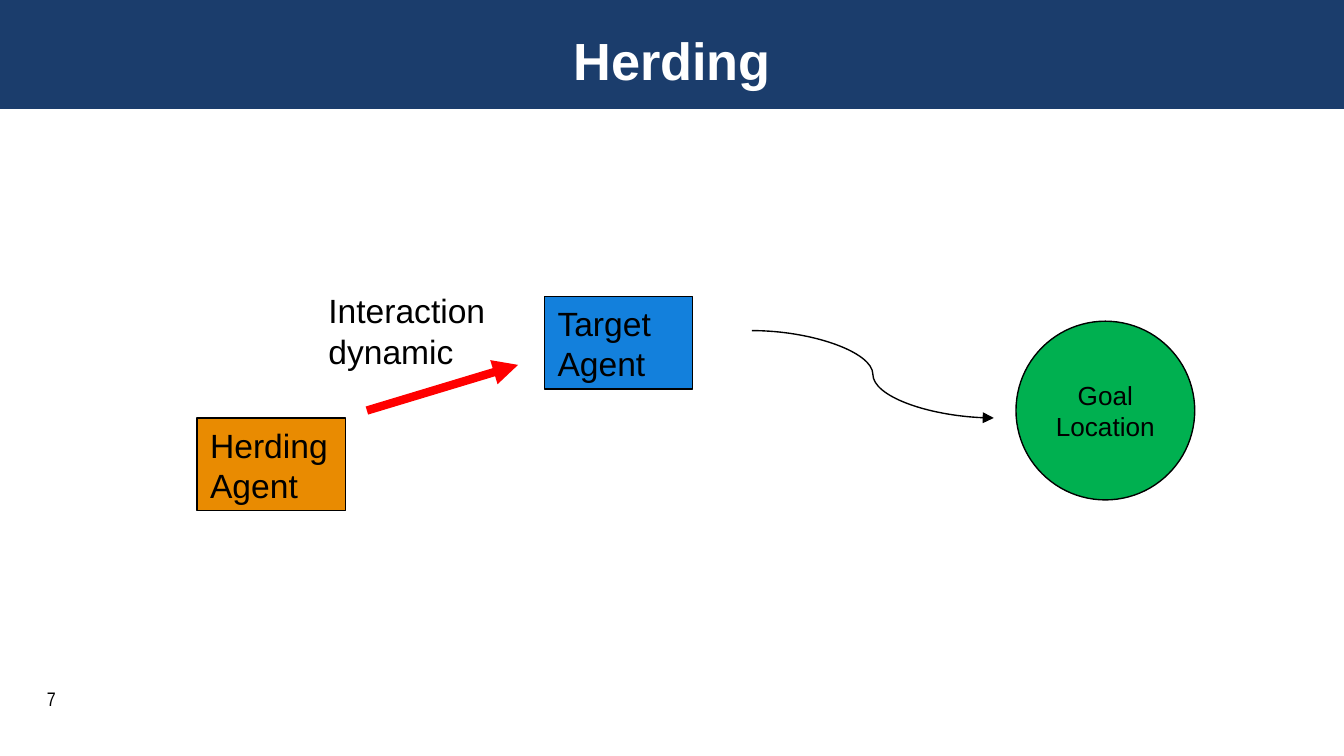
import pptx
import pptx.dml.color
import pptx.enum.shapes
import pptx.enum.text
import pptx.oxml
import pptx.oxml.ns
import pptx.util

PX = 4572  # EMU per px, 200 px to the inch
SLIDE_W, SLIDE_H = 2000, 1125
BLACK = "000000"
SHAPE = pptx.enum.shapes.MSO_SHAPE
CONNECTOR = pptx.enum.shapes.MSO_CONNECTOR
ALIGN = pptx.enum.text.PP_ALIGN
ANCHOR = pptx.enum.text.MSO_ANCHOR


def px(*lengths):
    return [pptx.util.Emu(length * PX) for length in lengths]


def rgb(color):
    return pptx.dml.color.RGBColor.from_string(color)


def write(shape, text, size, color=BLACK, font="Arial", bold=False,
          align=ALIGN.LEFT, anchor=ANCHOR.TOP):
    frame = shape.text_frame
    frame.text = text
    frame.word_wrap = True
    frame.vertical_anchor = anchor
    paragraph = frame.paragraphs[0]
    paragraph.alignment = align
    paragraph.font.size = pptx.util.Pt(size)
    paragraph.font.name = font
    paragraph.font.bold = bold
    paragraph.font.color.rgb = rgb(color)


def add_filled(slide, preset, box, fill, outline=None):
    shape = slide.shapes.add_shape(preset, *px(*box))
    shape.shadow.inherit = False
    shape.fill.solid()
    shape.fill.fore_color.rgb = rgb(fill)
    if outline:
        shape.line.color.rgb = rgb(outline)
        shape.line.width = pptx.util.Pt(0.75)
    else:
        shape.line.fill.background()
    return shape


def add_label(slide, box, text, size, font="Arial"):
    write(slide.shapes.add_textbox(*px(*box)), text, size, font=font)


def add_arrow(slide, kind, start, end, color, width):
    arrow = slide.shapes.add_connector(kind, *px(*start, *end))
    arrow.line.color.rgb = rgb(color)
    arrow.line.width = pptx.util.Pt(width)
    head = pptx.oxml.parse_xml(
        f'<a:tailEnd {pptx.oxml.ns.nsdecls("a")} type="triangle"/>')
    arrow.line._get_or_add_ln().append(head)
    effects = pptx.oxml.parse_xml(f'<a:effectLst {pptx.oxml.ns.nsdecls("a")}/>')
    arrow._element.spPr.append(effects)


def add_header(slide, box, text):
    left, top, width, height = box
    title = slide.shapes.title
    title.left, title.top, title.width, title.height = px(
        left + 50, top + 32, width - 100, height - 50)
    write(title, text, 28, "FFFFFF", bold=True,
          align=ALIGN.CENTER, anchor=ANCHOR.MIDDLE)
    band = add_filled(slide, SHAPE.RECTANGLE, box, "1B3D6C")
    title._element.addprevious(band._element)


def add_agent(slide, left, top, name, fill):
    agent = add_filled(slide, SHAPE.RECTANGLE, (left, top, 221, 138), fill, BLACK)
    write(agent, name, 18)


def add_goal(slide, left, top, diameter):
    goal = add_filled(slide, SHAPE.OVAL, (left, top, diameter, diameter),
                      "00B050", BLACK)
    write(goal, "Goal Location", 14, align=ALIGN.CENTER, anchor=ANCHOR.MIDDLE)
    goal.text_frame.margin_left = goal.text_frame.margin_right = 0


def add_herding_diagram(slide, left, top):
    add_goal(slide, left + 1220, top + 56, 266)
    add_agent(slide, left + 1, top + 200, "Herding Agent", "E98B01")
    add_agent(slide, left + 518, top + 19, "Target Agent", "1380DC")
    add_arrow(slide, CONNECTOR.STRAIGHT, (left + 254, top + 189),
              (left + 479, top + 121), "FF0000", 4.5)
    add_label(slide, (left + 177, top, 284, 142), "Interaction dynamic", 18)
    add_arrow(slide, CONNECTOR.CURVE, (left + 827, top + 70),
              (left + 1187, top + 200), BLACK, 0.75)


def main():
    deck = pptx.Presentation()
    deck.slide_width, deck.slide_height = px(SLIDE_W, SLIDE_H)
    slide = deck.slides.add_slide(deck.slide_layouts[5])
    add_header(slide, (0, 0, SLIDE_W, 162), "Herding")
    add_label(slide, (50, 1013, 200, 38), "7", 10.5, "Arial Narrow")
    add_herding_diagram(slide, 292, 422)
    deck.save("out.pptx")


if __name__ == "__main__":
    main()
